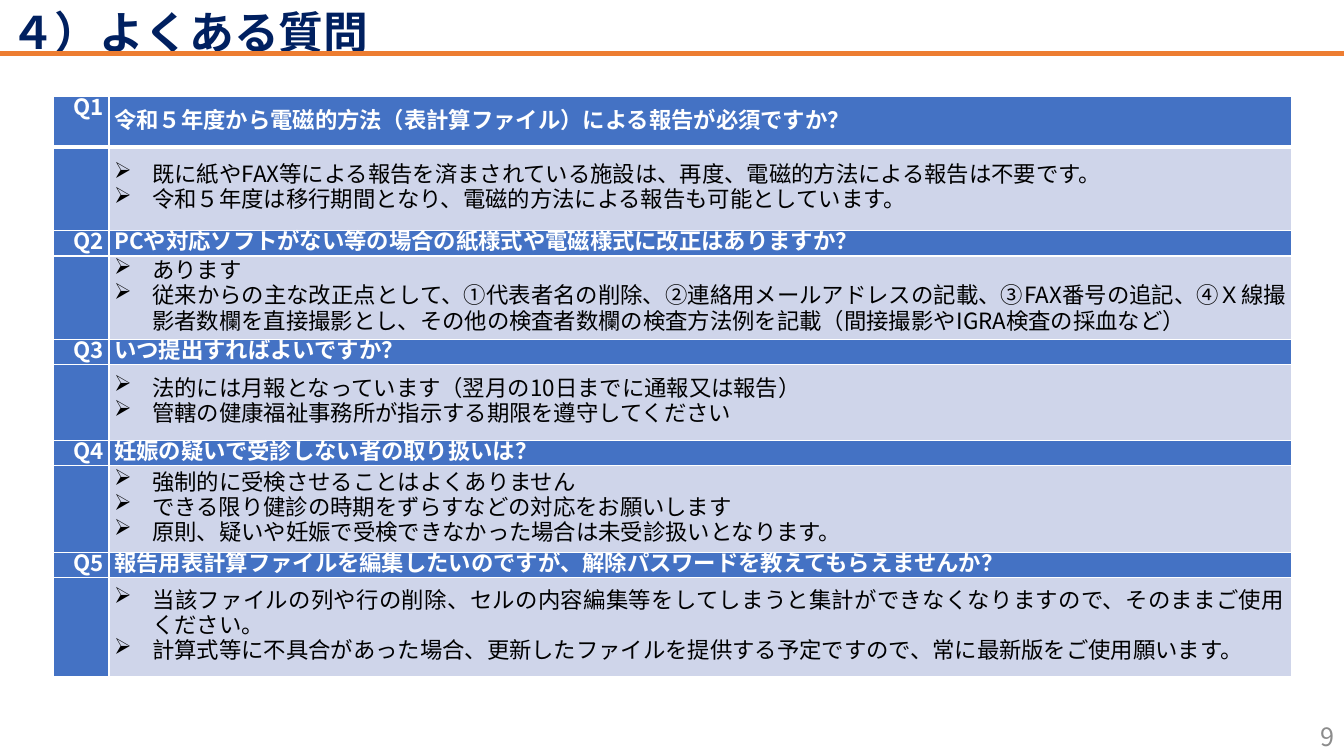
from dataclasses import dataclass

from lxml.etree import SubElement
from pptx import Presentation
from pptx.dml.color import RGBColor as Rgb
from pptx.enum.shapes import MSO_CONNECTOR as Connector
from pptx.enum.text import MSO_ANCHOR as Anchor, PP_ALIGN as Align
from pptx.oxml.ns import qn
from pptx.util import Cm, Pt


@dataclass(frozen=True)
class Theme:
    font: str = "Noto Sans CJK JP"
    navy: str = "002060"
    orange: str = "ED7D31"
    blue: str = "4472C4"
    pale: str = "CFD5EA"
    white: str = "FFFFFF"
    black: str = "000000"
    grey: str = "8C8C8C"
    title_size: int = 32
    number_size: int = 18
    table_size: int = 16


theme = Theme()


def add_span(para, text, size, color, bold=False):
    span = para.add_run()
    span.text = text
    span.font.size = Pt(size)
    span.font.bold = bold
    span.font.color.rgb = Rgb.from_string(color)
    span.font.name = theme.font
    SubElement(span.font._element, qn("a:ea"), typeface=theme.font)


def style_cell(cell, fill, bottom_width):
    cell.margin_left = cell.margin_right = Cm(0.13)
    cell.margin_top = cell.margin_bottom = 0
    cell.vertical_anchor = Anchor.MIDDLE
    properties = cell._tc.get_or_add_tcPr()
    for side, width in (("L", 1), ("R", 1), ("T", 1), ("B", bottom_width)):
        border = SubElement(properties, qn(f"a:ln{side}"), w=str(Pt(width)))
        paint = SubElement(border, qn("a:solidFill"))
        SubElement(paint, qn("a:srgbClr"), val=theme.white)
    cell.fill.solid()
    cell.fill.fore_color.rgb = Rgb.from_string(fill)


# Each entry: question, answers, question row height, answer row height (cm)
questions = [
    ("令和５年度から電磁的方法（表計算ファイル）による報告が必須ですか？",
     ["既に紙やFAX等による報告を済まされている施設は、再度、電磁的方法による報告は不要です。",
      "令和５年度は移行期間となり、電磁的方法による報告も可能としています。"],
     0.84, 2.1),
    ("PCや対応ソフトがない等の場合の紙様式や電磁様式に改正はありますか？",
     ["あります",
      "従来からの主な改正点として、①代表者名の削除、②連絡用メールアドレスの記載、"
      "③FAX番号の追記、④Ｘ線撮影者数欄を直接撮影とし、その他の検査者数欄の"
      "検査方法例を記載（間接撮影やIGRA検査の採血など）"],
     0.64, 2.1),
    ("いつ提出すればよいですか？",
     ["法的には月報となっています（翌月の10日までに通報又は報告）",
      "管轄の健康福祉事務所が指示する期限を遵守してください"],
     0.64, 1.9),
    ("妊娠の疑いで受診しない者の取り扱いは？",
     ["強制的に受検させることはよくありません",
      "できる限り健診の時期をずらすなどの対応をお願いします",
      "原則、疑いや妊娠で受検できなかった場合は未受診扱いとなります。"],
     0.64, 2.19),
    ("報告用表計算ファイルを編集したいのですが、解除パスワードを教えてもらえませんか？",
     ["当該ファイルの列や行の削除、セルの内容編集等をしてしまうと集計ができなくなりますので、"
      "そのままご使用ください。",
      "計算式等に不具合があった場合、更新したファイルを提供する予定ですので、"
      "常に最新版をご使用願います。"],
     0.64, 2.49),
]

deck = Presentation()
deck.slide_width, deck.slide_height = Cm(33.87), Cm(19.05)
page = deck.slides.add_slide(deck.slide_layouts[5])

# Title
title = page.shapes.title
title.left, title.top, title.width, title.height = 0, 0, deck.slide_width, Cm(1.62)
title.text_frame.vertical_anchor = Anchor.TOP
para = title.text_frame.paragraphs[0]
para.alignment = Align.LEFT
add_span(para, "４）よくある質問", theme.title_size, theme.navy, True)

# Rule under the title
rule = page.shapes.add_connector(
    Connector.STRAIGHT, 0, Cm(1.35), deck.slide_width, Cm(1.35))
rule.line.color.rgb = Rgb.from_string(theme.orange)
rule.line.width = Pt(3)
SubElement(rule._element.spPr, qn("a:effectLst"))

# Page number
box = page.shapes.add_textbox(Cm(26.25), Cm(18.04), Cm(7.62), Cm(1.01))
box.text_frame.word_wrap = True
box.text_frame.vertical_anchor = Anchor.MIDDLE
para = box.text_frame.paragraphs[0]
para.alignment = Align.RIGHT
add_span(para, "9", theme.number_size, theme.grey)

# Question table
heights = [height for entry in questions for height in entry[2:]]
table = page.shapes.add_table(
    len(heights), 2, Cm(1.35), Cm(2.44), Cm(31.19), Cm(sum(heights))).table
table.columns[0].width, table.columns[1].width = Cm(1.4), Cm(29.79)
for row, height in zip(table.rows, heights):
    row.height = Cm(height)

for index, (question, answers, *_) in enumerate(questions):
    top = 2 * index
    label_cell, question_cell = table.cell(top, 0), table.cell(top, 1)
    blank_cell, answer_cell = table.cell(top + 1, 0), table.cell(top + 1, 1)
    question_bottom = 3 if index == 0 else 1
    style_cell(label_cell, theme.blue, question_bottom)
    style_cell(question_cell, theme.blue, question_bottom)
    style_cell(blank_cell, theme.blue, 1)
    style_cell(answer_cell, theme.pale, 1)

    # Question row
    label = "Q1　" if index == 0 else f"Q{index + 1}"
    for cell, text, alignment in ((label_cell, label, Align.RIGHT),
                                  (question_cell, question, Align.JUSTIFY)):
        para = cell.text_frame.paragraphs[0]
        para.alignment = alignment
        para.line_spacing = Pt(18)
        add_span(para, text, theme.table_size, theme.white, True)

    # Bulleted answers
    frame = answer_cell.text_frame
    for number, answer in enumerate(answers):
        para = frame.add_paragraph() if number else frame.paragraphs[0]
        properties = para._p.get_or_add_pPr()
        properties.set("marL", str(Cm(0.96)))
        properties.set("indent", str(-Cm(0.96)))
        SubElement(properties, qn("a:buChar"), char="➢")
        para.alignment = Align.JUSTIFY
        para.line_spacing = Pt(18)
        add_span(para, answer, theme.table_size, theme.black)

deck.save("out.pptx")
